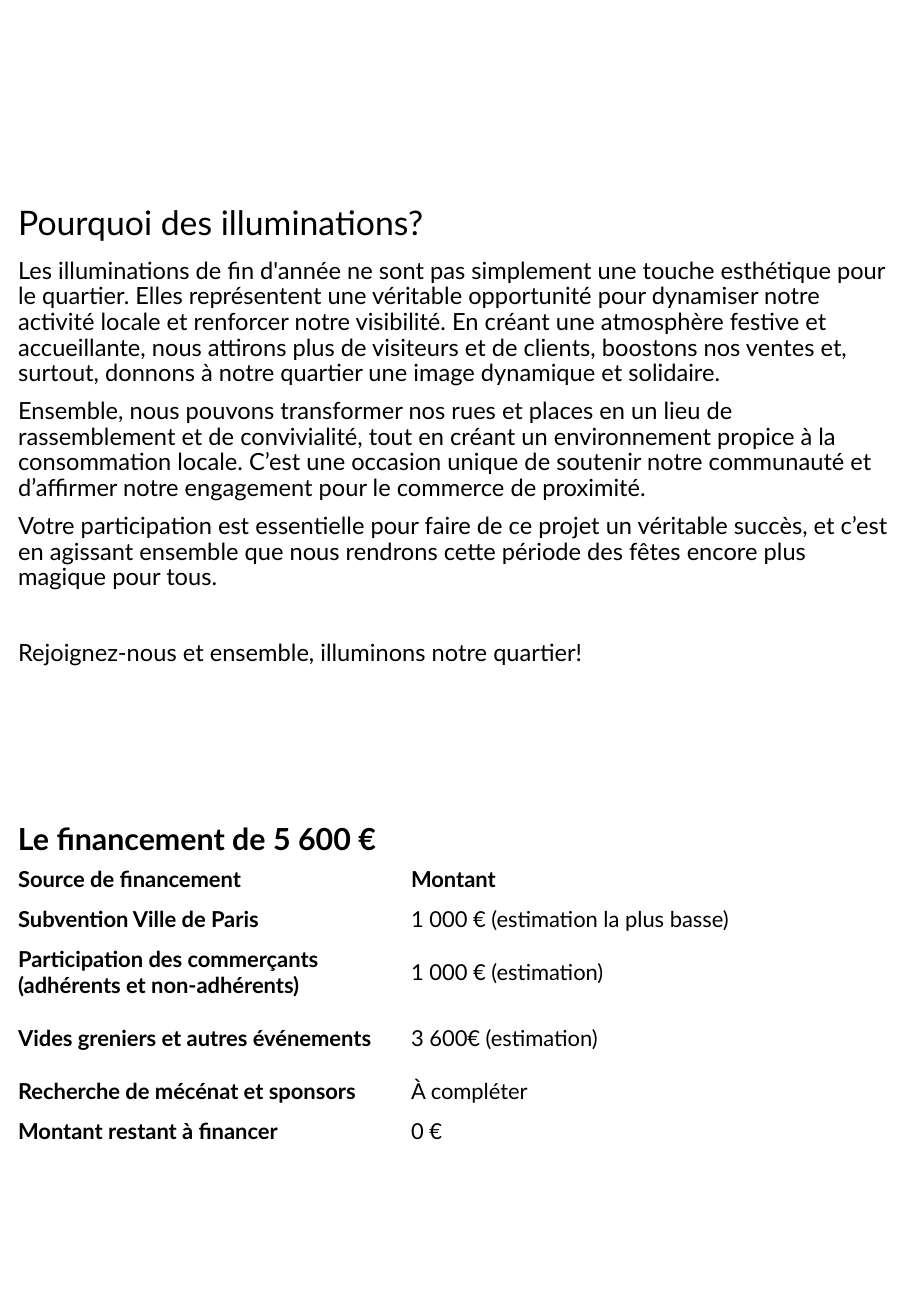
from lxml.etree import SubElement
from pptx import Presentation
from pptx.dml.color import RGBColor
from pptx.enum.text import MSO_ANCHOR as ANCHOR, MSO_AUTO_SIZE as AUTO_SIZE, PP_ALIGN as ALIGN
from pptx.oxml.ns import qn
from pptx.util import Pt

PX = 7526
BLACK = RGBColor(0, 0, 0)
FONT = "Lato"
LEFT = 6


def place(shape, left, top, width, height):
    shape.left, shape.top = left * PX, top * PX
    shape.width, shape.height = width * PX, height * PX


def format_text(paragraph, size, bold=False):
    paragraph.alignment = ALIGN.LEFT
    for run in paragraph.runs:
        run.font.name = FONT
        run.font.size = Pt(size)
        run.font.bold = bold
        run.font.color.rgb = BLACK


prs = Presentation()
prs.slide_width = 911 * PX
prs.slide_height = 1316 * PX
slide = prs.slides.add_slide(prs.slide_layouts[1])

question = slide.shapes.title
place(question, LEFT, 180, 786, 89)
question.text_frame.text = "Pourquoi des illuminations?"
question.text_frame.auto_size = AUTO_SIZE.NONE
question.text_frame.vertical_anchor = ANCHOR.MIDDLE
question.text_frame.paragraphs[0].line_spacing = 0.9
format_text(question.text_frame.paragraphs[0], 20)

arguments = [
    ("Les illuminations de fin d'année ne sont pas simplement une touche esthétique pour le quartier. "
     "Elles représentent une véritable opportunité pour dynamiser notre activité locale et renforcer "
     "notre visibilité. En créant une atmosphère festive et accueillante, nous attirons plus de "
     "visiteurs et de clients, boostons nos ventes et, surtout, donnons à notre quartier une image "
     "dynamique et solidaire.", 0),
    ("Ensemble, nous pouvons transformer nos rues et places en un lieu de rassemblement et de "
     "convivialité, tout en créant un environnement propice à la consommation locale. C’est une "
     "occasion unique de soutenir notre communauté et d’affirmer notre engagement pour le commerce "
     "de proximité.", 7.5),
    ("Votre participation est essentielle pour faire de ce projet un véritable succès, et c’est en "
     "agissant ensemble que nous rendrons cette période des fêtes encore plus magique pour tous.", 7.5),
    ("Rejoignez-nous et ensemble, illuminons notre quartier!", 30),
]
appeal = slide.placeholders[1]
place(appeal, LEFT, 199, 900, 491)
appeal_text = appeal.text_frame
appeal_text.text = "\n".join(text for text, _ in arguments)
appeal_text.auto_size = AUTO_SIZE.NONE
appeal_text.vertical_anchor = ANCHOR.TOP
appeal_text.margin_top = 60 * PX
for paragraph, (_, space_before) in zip(appeal_text.paragraphs, arguments):
    paragraph.line_spacing = 0.9
    paragraph.space_before = Pt(space_before)
    format_text(paragraph, 14)
    properties = paragraph._p.get_or_add_pPr()
    properties.set("marL", "0")
    properties.set("indent", "0")
    SubElement(properties, qn("a:buNone"))

funding = [
    ("Source de financement", "Montant", 40),
    ("Subvention Ville de Paris", "1 000 € (estimation la plus basse)", 40),
    ("Participation des commerçants (adhérents et non-adhérents)", "1 000 € (estimation)", 66),
    ("Vides greniers et autres événements", "3 600€ (estimation)", 66),
    ("Recherche de mécénat et sponsors", "À compléter", 40),
    ("Montant restant à financer", "0 €", 40),
]
funding_height = sum(height for _, _, height in funding)
funding_table = slide.shapes.add_table(
    len(funding), 2, LEFT * PX, 859 * PX, 786 * PX, funding_height * PX).table
funding_table.first_row = False
funding_table.horz_banding = False
for row, (source, amount, height) in enumerate(funding):
    funding_table.rows[row].height = height * PX
    for column, text in enumerate((source, amount)):
        cell = funding_table.cell(row, column)
        cell.fill.background()
        cell.vertical_anchor = ANCHOR.MIDDLE
        cell.text_frame.text = text
        format_text(cell.text_frame.paragraphs[0], 13, bold=row == 0 or column == 0)

funding_heading = slide.shapes.add_textbox(LEFT * PX, 814 * PX, 458 * PX, 49 * PX)
funding_heading.text_frame.word_wrap = True
funding_heading.text_frame.text = "Le financement de 5 600 €"
format_text(funding_heading.text_frame.paragraphs[0], 18, bold=True)

prs.save("out.pptx")
